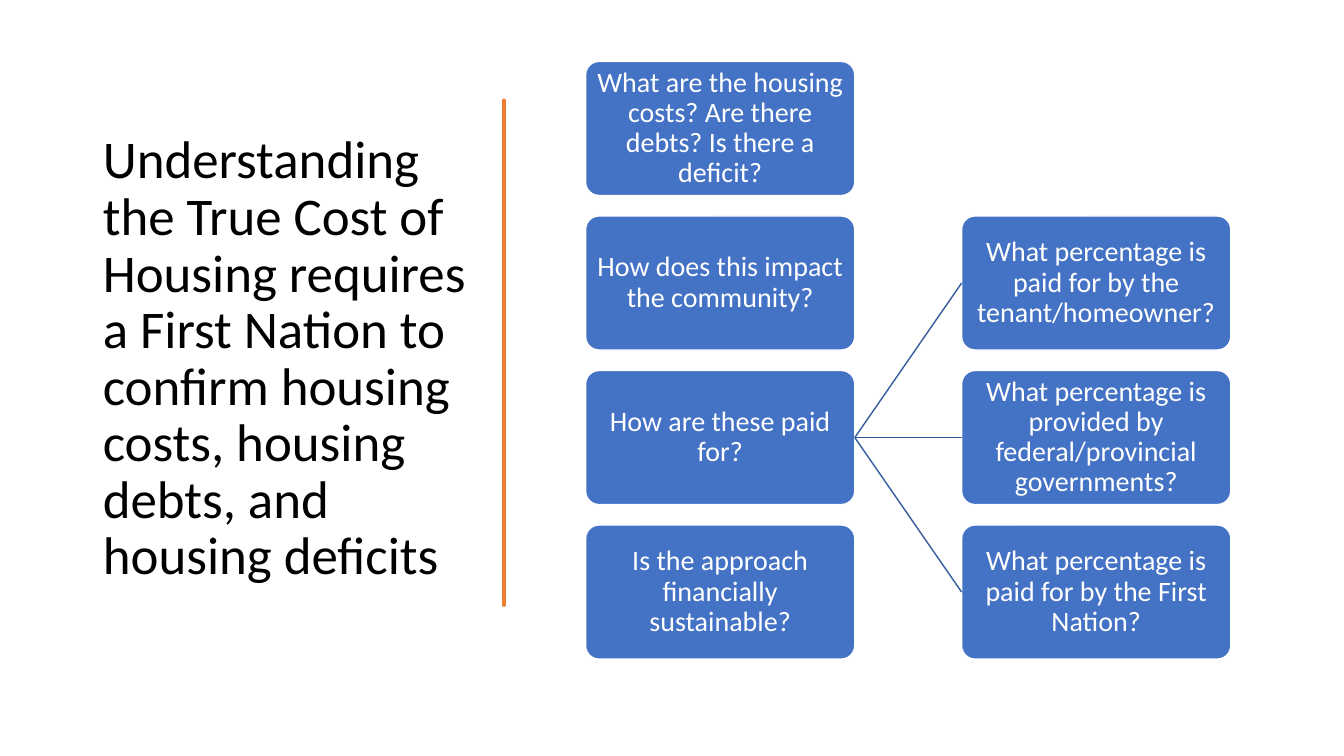
from lxml import etree
from pptx import Presentation
from pptx import util as u
from pptx.dml.color import RGBColor
from pptx.enum import shapes, text
from pptx.oxml import ns

FONT = "Calibri"
BLUE, WHITE, BLACK, ORANGE, LINK = "4472C4", "FFFFFF", "000000", "ED7D31", "365B9D"
GRID_LEFT, GRID_TOP = 5.81, 0.61
COLUMN_STEP, ROW_STEP = 3.73, 1.533
BOX_WIDTH, BOX_HEIGHT = 2.67, 1.33

TITLE = ("Understanding the True Cost of Housing requires a First Nation to "
         "confirm housing costs, housing debts, and housing deficits")
QUESTIONS = [
    "What are the housing costs? Are there debts? Is there a deficit?",
    "How does this impact the community?",
    "How are these paid for?",
    "Is the approach financially sustainable?",
]
SHARES = [
    "What percentage is paid for by the tenant/homeowner?",
    "What percentage is provided by federal/provincial governments?",
    "What percentage is paid for by the First Nation?",
]
STROKE_RIGHT = [(5.24, 1.12), (5.24, 1.77), (5.24, 2.33), (5.25, 2.65), (5.24, 3.05),
                (5.23, 3.35), (5.24, 3.68), (5.24, 4.33), (5.25, 4.6), (5.24, 4.93),
                (5.25, 5.23), (5.24, 6.02)]
STROKE_LEFT = [(5.22, 6.02), (5.21, 5.55), (5.22, 5.32), (5.23, 5.07), (5.22, 4.72),
               (5.22, 3.92), (5.22, 3.37), (5.21, 3.0), (5.22, 2.65), (5.22, 1.97),
               (5.23, 1.6), (5.22, 1.12)]


def colour(value):
    return RGBColor.from_string(value)


def paint(shape, fill, line, width):
    shape.shadow.inherit = False
    shape.fill.solid()
    shape.fill.fore_color.rgb = colour(fill)
    shape.line.color.rgb = colour(line)
    shape.line.width = u.Pt(width)


def write(frame, words, size, ink, align, spacing):
    frame.word_wrap = True
    frame.auto_size = text.MSO_AUTO_SIZE.NONE
    frame.vertical_anchor = text.MSO_ANCHOR.MIDDLE
    para = frame.paragraphs[0]
    para.text = words
    para.alignment = align
    para.line_spacing = spacing
    para.font.name = FONT
    para.font.size = u.Pt(size)
    para.font.color.rgb = colour(ink)


def add_title(page):
    title = page.shapes.title
    title.left, title.top = u.Inches(0.92), u.Inches(0.6)
    title.width, title.height = u.Inches(3.94), u.Inches(5.94)
    write(title.text_frame, TITLE, 37.8, BLACK, text.PP_ALIGN.LEFT, 0.89)


def add_divider(page):
    points = STROKE_RIGHT + STROKE_LEFT
    builder = page.shapes.build_freeform(*points[0], scale=u.Inches(1))
    builder.add_line_segments(points[1:], close=True)
    paint(builder.convert_to_shape(), ORANGE, ORANGE, 3.25)


def add_question(page, column, row, words):
    box = page.shapes.add_shape(
        shapes.MSO_SHAPE.ROUNDED_RECTANGLE,
        u.Inches(GRID_LEFT + column * COLUMN_STEP),
        u.Inches(GRID_TOP + row * ROW_STEP),
        u.Inches(BOX_WIDTH), u.Inches(BOX_HEIGHT))
    box.adjustments[0] = 0.1
    paint(box, BLUE, WHITE, 1)
    frame = box.text_frame
    frame.margin_left = frame.margin_right = u.Inches(0.01)
    frame.margin_top = frame.margin_bottom = u.Inches(0.01)
    write(frame, words, 20, WHITE, text.PP_ALIGN.CENTER, 0.9)
    return box


def link(page, source, target):
    line = page.shapes.add_connector(shapes.MSO_CONNECTOR.STRAIGHT, 0, 0, 0, 0)
    line.begin_connect(source, 3)
    line.end_connect(target, 1)
    line.line.color.rgb = colour(LINK)
    line.line.width = u.Pt(1)
    etree.SubElement(line._element.spPr, ns.qn("a:effectLst"))


def main():
    deck = Presentation()
    deck.slide_width, deck.slide_height = u.Inches(13.333), u.Inches(7.5)
    page = deck.slides.add_slide(deck.slide_layouts.get_by_name("Title Only"))
    add_title(page)
    add_divider(page)
    questions = [add_question(page, 0, row, words) for row, words in enumerate(QUESTIONS)]
    for row, words in enumerate(SHARES, start=1):
        link(page, questions[2], add_question(page, 1, row, words))
    deck.save("out.pptx")


if __name__ == "__main__":
    main()
